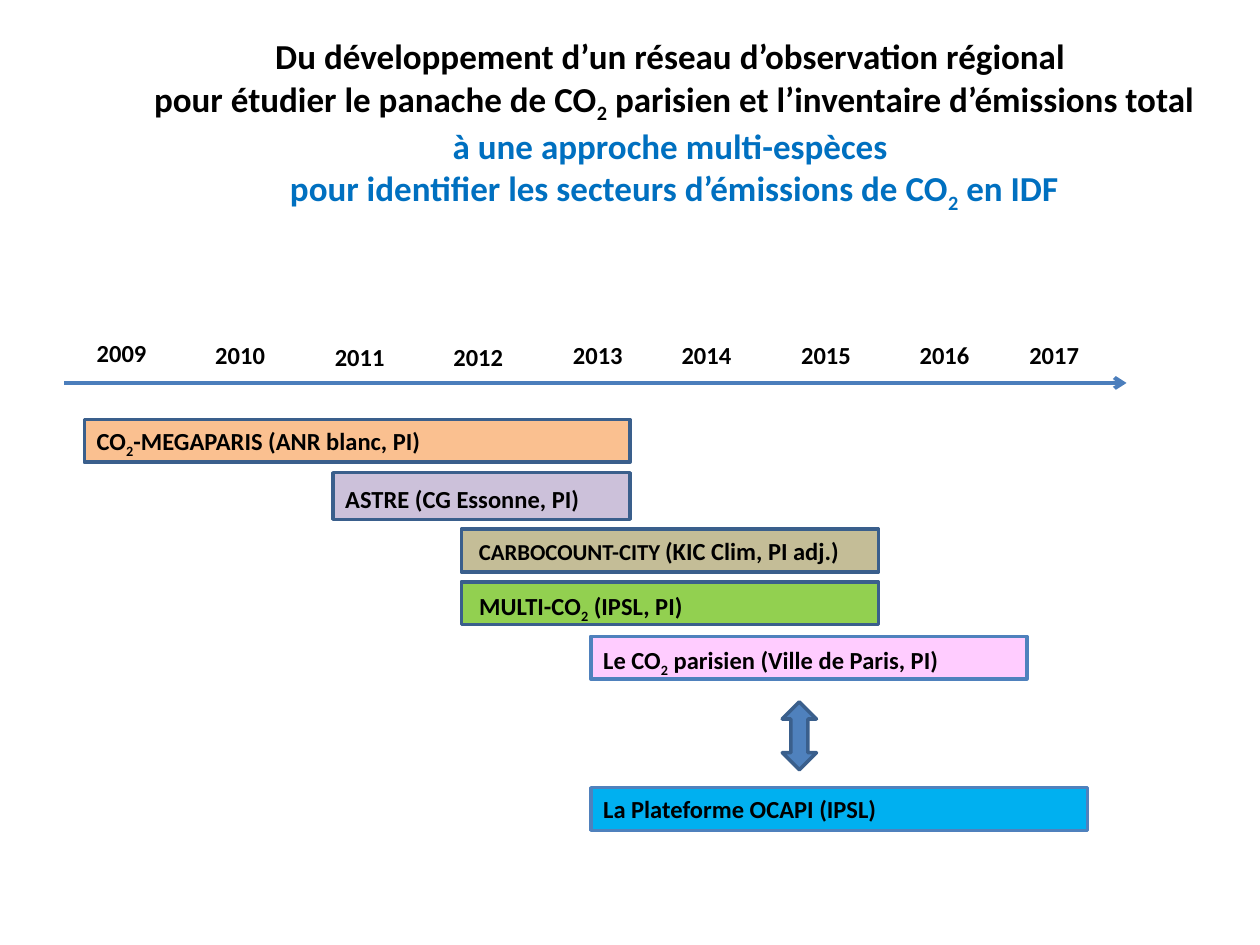
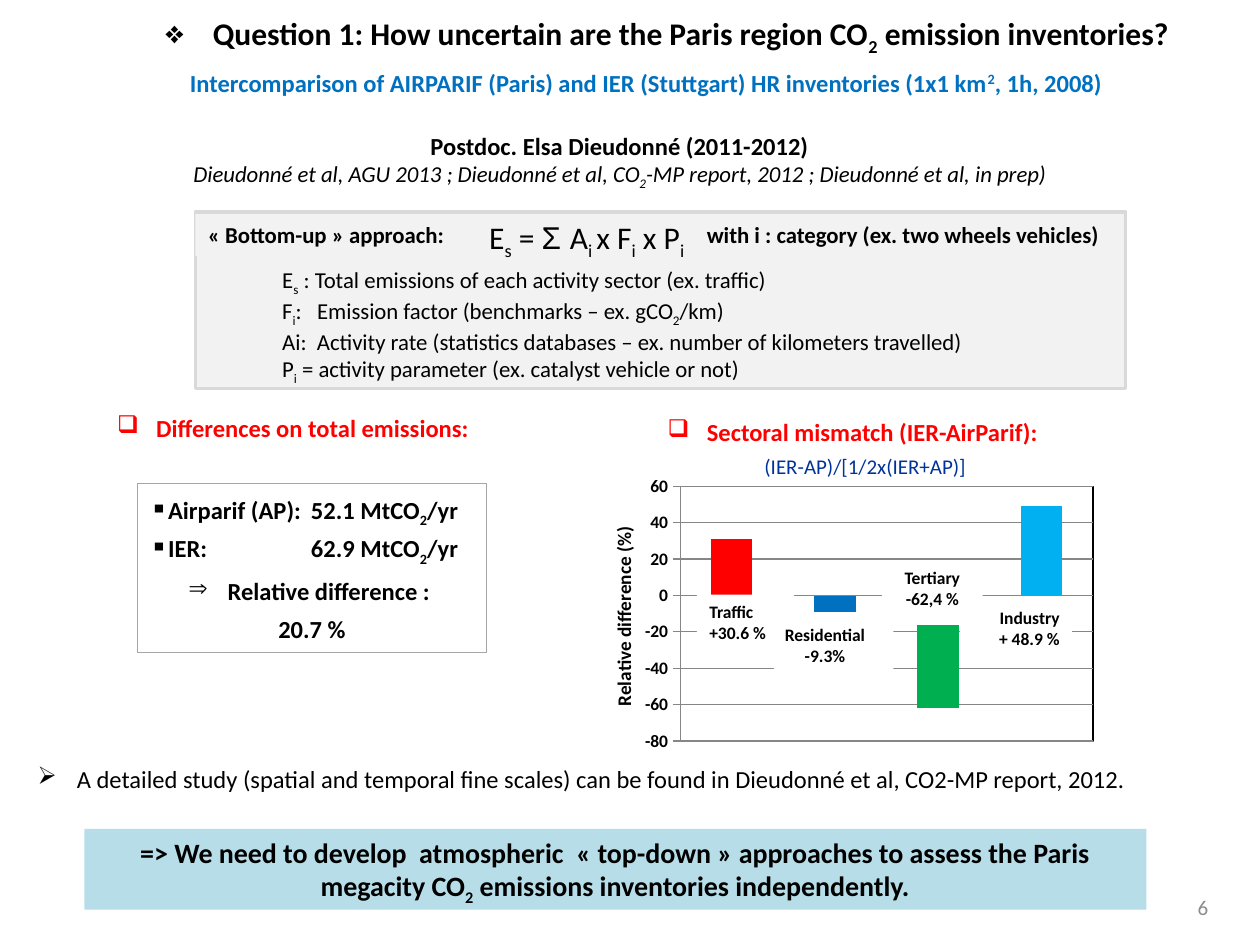
"""Build two slides on the Paris CO2 projects and the emission inventories."""
from lxml.etree import SubElement
from pptx import Presentation
from pptx.chart.data import CategoryChartData
from pptx.dml.color import RGBColor
from pptx.enum.chart import XL_CHART_TYPE, XL_TICK_MARK
from pptx.enum.shapes import MSO_CONNECTOR, MSO_SHAPE
from pptx.enum.text import MSO_ANCHOR, MSO_AUTO_SIZE, PP_ALIGN
from pptx.oxml import parse_xml
from pptx.oxml.ns import nsdecls, qn
from pptx.util import Cm, Pt

color = RGBColor.from_string
BLACK, BLUE, RED, WHITE = "000000", "0070C0", "FF0000", "FFFFFF"
STEEL, DARK_STEEL, AXIS_GREY, PANEL = "4F81BD", "3A5F8C", "868686", "F2F2F2"
CENTER, RIGHT = PP_ALIGN.CENTER, PP_ALIGN.RIGHT
BASELINES = {"_": "-25000", "^": "30000"}
TEXT_STYLE = {"size": 14, "bold": True, "italic": False, "color": BLACK, "align": PP_ALIGN.LEFT,
              "spacing": None, "bullet": None, "indent": 0, "tab": None}


def write(shape, lines, anchor=MSO_ANCHOR.TOP, **common):
    frame = shape.text_frame
    frame_format = {"word_wrap": True, "auto_size": MSO_AUTO_SIZE.NONE, "vertical_anchor": anchor}
    for name, value in frame_format.items():
        setattr(frame, name, value)
    for index, line in enumerate(lines):
        text, own = line if isinstance(line, tuple) else (line, {})
        style = {**TEXT_STYLE, **common, **own}
        paragraph = frame.add_paragraph() if index else frame.paragraphs[0]
        paragraph.alignment = style["align"]
        if style["spacing"]:
            paragraph.line_spacing = Pt(style["spacing"])
        properties = paragraph._p.get_or_add_pPr()
        if style["bullet"]:
            properties.set("marL", str(Cm(style["indent"])))
            properties.set("indent", str(-Cm(style["indent"])))
            SubElement(properties, qn("a:buChar"), char=style["bullet"])
        if style["tab"]:
            tabs = SubElement(properties, qn("a:tabLst"))
            SubElement(tabs, qn("a:tab"), pos=str(Cm(style["tab"])), algn="l")
        font_format = {"name": "Calibri", "size": Pt(style["size"]),
                       "bold": style["bold"], "italic": style["italic"]}
        for part in text.split("|"):
            run = paragraph.add_run()
            run.text = part[1:] if part[0] in BASELINES else part
            for name, value in font_format.items():
                setattr(run.font, name, value)
            run.font.color.rgb = color(style["color"])
            if part[0] in BASELINES:
                run._r.get_or_add_rPr().set("baseline", BASELINES[part[0]])


def add_box(slide, place, lines=(), fill=None, line=None, width=2, kind=MSO_SHAPE.RECTANGLE, **style):
    place = [Cm(length) for length in place]
    if fill or line:
        shape = slide.shapes.add_shape(kind, *place)
        shape.shadow.inherit = False
    else:
        shape = slide.shapes.add_textbox(*place)
    if fill:
        shape.fill.solid()
        shape.fill.fore_color.rgb = color(fill)
    else:
        shape.fill.background()
    if line:
        shape.line.color.rgb = color(line)
        shape.line.width = Pt(width)
    else:
        shape.line.fill.background()
    write(shape, lines, **style)
    return shape


presentation = Presentation()
presentation.slide_width, presentation.slide_height = Cm(25.4), Cm(19.05)
titles = [
    ((2.49, 0.71, 22.2, 3.61),
     ["Du développement d’un réseau d’observation régional ",
      "pour étudier le panache de CO|_2| parisien et l’inventaire d’émissions total",
      ("à une approche multi-espèces ", {"color": BLUE}),
      ("pour identifier les secteurs d’émissions de CO|_2| en IDF", {"color": BLUE})],
     {"size": 20}),
    ((1.5, 0.03, 23.9, 1.5),
     ["Question 1: How uncertain are the Paris region CO|_2| emission inventories?"],
     {"size": 18, "spacing": 21, "bullet": "❖", "indent": 0.95}),
]
for place, lines, style in titles:
    slide = presentation.slides.add_slide(presentation.slide_layouts[5])
    title = slide.shapes.title
    for name, value in zip(("left", "top", "width", "height"), place):
        setattr(title, name, Cm(value))
    write(title, lines, anchor=MSO_ANCHOR.MIDDLE, align=CENTER, **style)
timeline, inventories = presentation.slides

year_places = [(1.7, 6.68), (4.09, 6.73), (6.5, 6.78), (8.89, 6.78), (11.3, 6.73),
               (13.49, 6.73), (15.9, 6.73), (18.29, 6.73), (20.5, 6.73)]
for year, (left, top) in enumerate(year_places, 2009):
    add_box(timeline, (left, top, 2, 0.86), [str(year)])

time_axis = timeline.shapes.add_connector(MSO_CONNECTOR.STRAIGHT, Cm(1.3), Cm(7.72), Cm(22.71), Cm(7.72))
time_axis.line.color.rgb = color("4B7EBC")
time_axis.line.width = Pt(2.25)
axis_properties = time_axis._element.spPr
SubElement(axis_properties.find(qn("a:ln")), qn("a:tailEnd"), type="arrow")
SubElement(axis_properties, qn("a:effectLst"))

projects = [
    ("CO|_2|-MEGAPARIS (ANR blanc, PI)", (1.7, 8.46, 11, 0.86), "FAC090", DARK_STEEL, 0),
    ("ASTRE (CG Essonne, PI)", (6.71, 9.53, 5.99, 0.94), "CCC1DA", DARK_STEEL, 0.1),
    (" CARBOCOUNT-CITY |(KIC Clim, PI adj.)", (9.3, 10.67, 8.41, 0.86), "C4BD97", DARK_STEEL, 0),
    (" MULTI-CO|_2| (IPSL, PI)", (9.3, 11.73, 8.41, 0.86), "92D050", DARK_STEEL, 0.05),
    ("Le CO|_2| parisien (Ville de Paris, PI)", (11.91, 12.83, 8.79, 0.86), "FFCCFF", STEEL, 0.05),
    ("La Plateforme OCAPI (IPSL)", (11.91, 15.88, 10.01, 0.86), "00B0F0", STEEL, 0),
]
for label, place, fill, line, drop in projects:
    bar = add_box(timeline, place, [label], fill, line)
    bar.text_frame.margin_top = Cm(0.13 + drop)
    if "CARBOCOUNT" in label:
        bar.text_frame.paragraphs[0].runs[0].font.size = Pt(13)
add_box(timeline, (15.77, 14.15, 0.69, 1.37), fill=STEEL, line=DARK_STEEL, kind=MSO_SHAPE.UP_DOWN_ARROW)

add_box(inventories, (18.69, 17.78, 5.92, 1.02), ["6"], anchor=MSO_ANCHOR.MIDDLE,
        size=12, bold=False, color="8C8C8C", align=RIGHT)
add_box(inventories, (3.58, 1.24, 21, 0.86),
        ["Intercomparison of AIRPARIF (Paris) and IER (Stuttgart) HR inventories (1x1 km|^2|, 1h, 2008)"],
        color=BLUE)
add_box(inventories, (1.68, 2.51, 21.62, 1.42),
        ["Postdoc. Elsa Dieudonné (2011-2012)",
         ("Dieudonné et al, AGU 2013 ; Dieudonné et al, CO|_2|-MP report, 2012 ; Dieudonné et al, in prep)",
          {"size": 13, "bold": False, "italic": True})], align=CENTER)

add_box(inventories, (3.94, 4.27, 18.75, 3.56), fill=PANEL, line="D9D9D9")
add_box(inventories, (3.94, 4.32, 9.42, 0.84), ["«\u00a0Bottom-up\u00a0» approach:"], PANEL, size=13)
add_box(inventories, (5.44, 5.23, 15.93, 2.49),
        ["E|_s| : Total emissions of each activity sector (ex. traffic)",
         "F|_i|:   Emission factor (benchmarks – ex. gCO|_2|/km)",
         "Ai:  Activity rate (statistics databases – ex. number of kilometers travelled)",
         "P|_i| = activity parameter (ex. catalyst vehicle or not)"], PANEL, size=13, bold=False)
formula = add_box(inventories, (9.47, 4.27, 5.6, 1.02), [" E|_s| = |Σ |A|_i |x F|_i| x P|_i"],
                  size=18, bold=False)
formula.text_frame.paragraphs[0].runs[3].font.name = "Arial"
add_box(inventories, (14, 4.32, 8.92, 0.81), ["with i : category (ex. two wheels vehicles)"], size=13)

headings = [("Differences on total emissions:", (2.11, 8.2, 8.33, 0.86)),
            ("Sectoral mismatch (IER-AirParif):", (13.21, 8.28, 10.29, 0.86))]
for heading, place in headings:
    add_box(inventories, place, [heading], color=RED, bullet="❑", indent=0.79)
total_row = {"bullet": "▪", "indent": 0.34, "tab": 3.25}
add_box(inventories, (2.77, 9.75, 7.04, 3.4),
        [("Airparif (AP):\t52.1 MtCO|_2|/yr", total_row),
         ("IER:\t62.9 MtCO|_2|/yr", total_row),
         ("Relative difference : ", {"align": CENTER, "bullet": "⇒", "indent": 0.79}),
         ("20.7 %", {"align": CENTER})], line="A6A6A6", width=0.75, spacing=22)

axis_title = add_box(inventories, (9.42, 12.01, 6.32, 0.74), ["Relative difference (%) "], WHITE,
                     size=11, align=CENTER)
axis_title.rotation = 270
chart_data = CategoryChartData(number_format="0")
chart_data.categories = ["1", "2", "3", "4"]
chart_data.add_series("Series 1", (31, -9, -62, 49))
chart = inventories.shapes.add_chart(XL_CHART_TYPE.COLUMN_CLUSTERED, Cm(12.87), Cm(9.46),
                                     Cm(9.35), Cm(5.77), chart_data).chart
chart.has_legend = chart.has_title = False
chart.font.name, chart.font.size = "Calibri", Pt(10)
chart.font.color.rgb = color(BLACK)
chart.category_axis.visible = False
value_axis = chart.value_axis
axis_format = {"minimum_scale": -80, "maximum_scale": 60, "major_unit": 20,
               "major_tick_mark": XL_TICK_MARK.OUTSIDE, "has_major_gridlines": True}
for name, value in axis_format.items():
    setattr(value_axis, name, value)
value_axis.tick_labels.font.bold = True
value_axis.tick_labels.font.size = Pt(10)
for axis_line in (value_axis.format.line, value_axis.major_gridlines.format.line):
    axis_line.color.rgb = color(AXIS_GREY)
    axis_line.width = Pt(0.75)
plot = chart.plots[0]
plot.gap_width, plot.vary_by_categories = 150, False
sectors = plot.series[0]
sectors.invert_if_negative = False
for index, fill in enumerate((RED, BLUE, "00B050", "00B0F0")):
    column = sectors.points[index].format.fill
    column.solid()
    column.fore_color.rgb = color(fill)
plot_area = chart.element.find(".//" + qn("c:plotArea"))
for layout in plot_area.findall(qn("c:layout")):
    plot_area.remove(layout)
plot_area.insert(0, parse_xml(
    f'<c:layout {nsdecls("c")}><c:manualLayout><c:layoutTarget val="inner"/>'
    '<c:xMode val="edge"/><c:yMode val="edge"/><c:x val="0.09"/><c:y val="0.06"/>'
    '<c:w val="0.89"/><c:h val="0.89"/></c:manualLayout></c:layout>'))
plot_area.append(parse_xml(
    f'<c:spPr {nsdecls("c", "a")}><a:noFill/><a:ln w="9525"><a:solidFill>'
    f'<a:srgbClr val="{BLACK}"/></a:solidFill></a:ln></c:spPr>'))

sector_labels = [
    (["Traffic", "+30.6 %"], (14.05, 11.99, 1.96), PP_ALIGN.LEFT, 0.25, 0.1),
    (["Residential", "-9.3%"], (15.6, 12.45, 2.41), CENTER, 0.05, 0.4),
    (["Tertiary", "-62,4 %"], (17.78, 11.3, 2.03), CENTER, 0.25, 0.25),
    (["Industry", "+ 48.9 %"], (19.35, 12.12, 2.26), RIGHT, 0.1, 0.25),
]
for lines, place, align, left_margin, right_margin in sector_labels:
    label = add_box(inventories, (*place, 1.3), lines, WHITE, size=10, align=align)
    label.text_frame.margin_left = Cm(left_margin)
    label.text_frame.margin_right = Cm(right_margin)
add_box(inventories, (15.16, 9.02, 7.72, 0.89), ["(IER-AP)/[1/2x(IER+AP)]"],
        size=12, bold=False, color="003399")

add_box(inventories, (0.51, 15.24, 24.61, 0.89),
        ["A detailed study (spatial and temporal fine scales) can be found in Dieudonné et al, "
         "CO2-MP report, 2012."], bold=False, bullet="➢", indent=0.79, spacing=18)
add_box(inventories, (1.7, 16.71, 21.41, 1.63),
        ["=> We need to develop  atmospheric  «\u00a0top-down\u00a0» approaches to assess the Paris "
         "megacity CO|_2| emissions inventories independently."], "B7DEE8", size=16, align=CENTER)

presentation.save("out.pptx")
